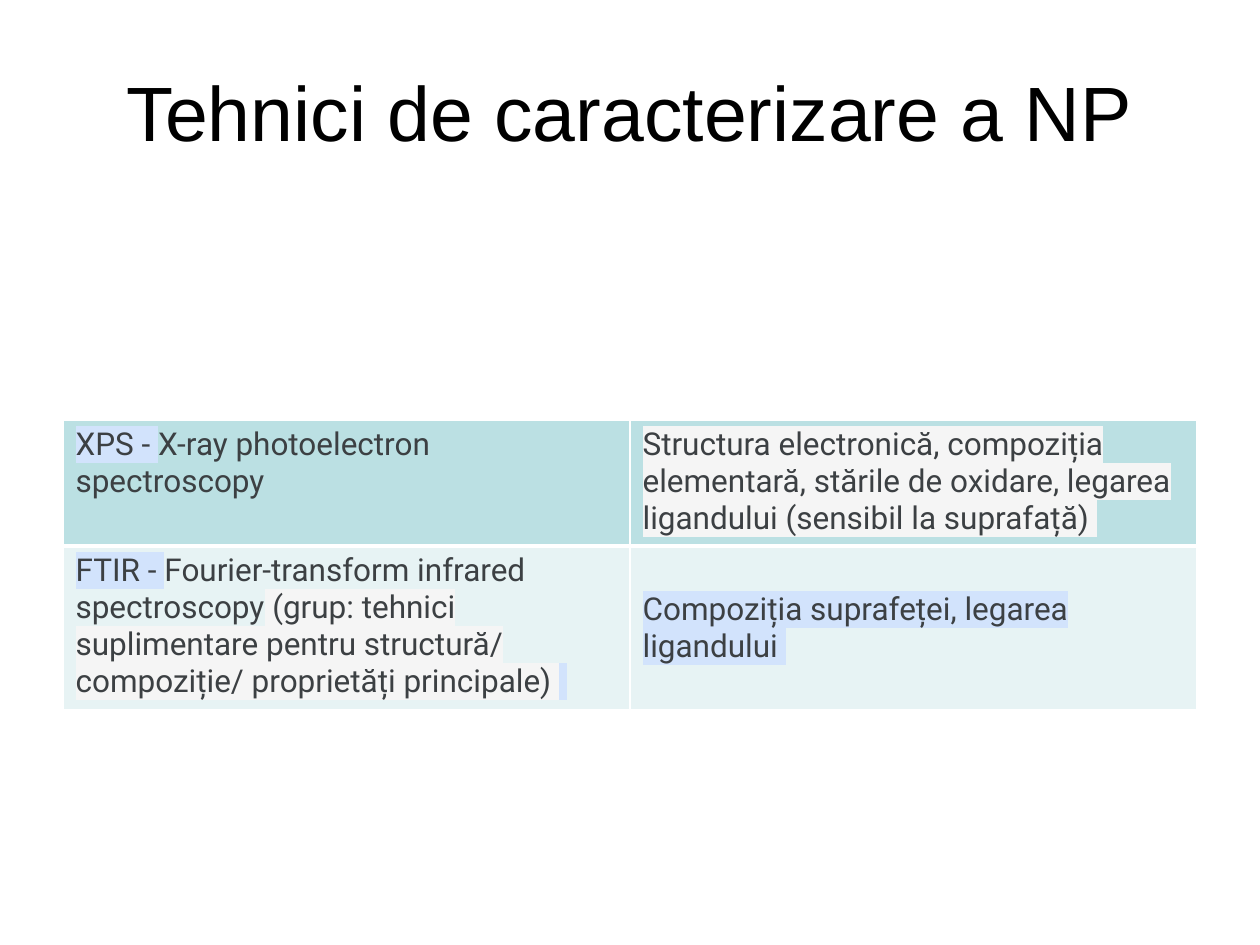
from lxml import etree
from pptx import Presentation
from pptx.dml.color import RGBColor
from pptx.enum import text
from pptx.oxml import ns
from pptx.util import Pt

BLUE, GREY = "D2E3FC", "F5F5F5"
ROWS = [
    ("BBE0E3", 70, [
        [("XPS - ", BLUE), ("X-ray photoelectron spectroscopy", None)],
        [("Structura electronică, compoziția elementară, stările de oxidare, "
          "legarea ligandului (sensibil la suprafață) ", GREY)],
    ]),
    ("E7F3F4", 90, [
        [("FTIR - ", BLUE), ("Fourier-transform infrared spectroscopy", None),
         (" (grup: tehnici suplimentare pentru structură/ compoziție/ "
          "proprietăți principale) ", GREY), (" ", BLUE)],
        [("Compoziția suprafeței, legarea ligandului ", BLUE)],
    ]),
]


def rgb(value):
    return RGBColor.from_string(value)


def add_color(parent, tag, value):
    """Append a colour-holding element, such as a:solidFill, and return it."""
    holder = etree.SubElement(parent, ns.qn(tag))
    etree.SubElement(holder, ns.qn("a:srgbClr"), val=value)
    return holder


def add_span(para, words, size, font, color, highlight=None):
    span = para.add_run()
    span.text = words
    span.font.size = Pt(size)
    span.font.name = font
    span.font.color.rgb = rgb(color)
    if highlight:
        props = span.font._element
        marker = add_color(props, "a:highlight", highlight)
        props.find(ns.qn("a:solidFill")).addnext(marker)


def add_title(page, words):
    box = page.shapes.add_textbox(Pt(36), Pt(18), Pt(648), Pt(90))
    frame = box.text_frame
    frame.word_wrap = True
    frame.vertical_anchor = text.MSO_ANCHOR.MIDDLE
    para = frame.paragraphs[0]
    para.alignment = text.PP_ALIGN.CENTER
    add_span(para, words, 44, "Arial", "000000")


def set_borders(cell, top, bottom):
    """Draw white borders; must come before the cell's fill is set."""
    props = cell._tc.get_or_add_tcPr()
    for side, width in zip("LRTB", (1, 1, top, bottom)):
        line = etree.SubElement(props, ns.qn(f"a:ln{side}"), w=str(Pt(width)))
        add_color(line, "a:solidFill", "FFFFFF")


def add_techniques_table(page):
    height = sum(row[1] for row in ROWS)
    table = page.shapes.add_table(len(ROWS), 2, Pt(36), Pt(240),
                                  Pt(648), Pt(height)).table
    for index, (fill, row_height, contents) in enumerate(ROWS):
        table.rows[index].height = Pt(row_height)
        for cell, spans in zip(table.rows[index].cells, contents):
            set_borders(cell, 3 if index else 1, 1 if index else 3)
            cell.fill.solid()
            cell.fill.fore_color.rgb = rgb(fill)
            for words, highlight in spans:
                add_span(cell.text_frame.paragraphs[0], words, 18, "Roboto",
                         "3C4043", highlight)
    table.cell(1, 1).vertical_anchor = text.MSO_ANCHOR.MIDDLE


def main():
    deck = Presentation()
    deck.slide_width, deck.slide_height = Pt(720), Pt(540)
    page = deck.slides.add_slide(deck.slide_layouts[6])
    add_title(page, "Tehnici de caracterizare a NP")
    add_techniques_table(page)
    deck.save("out.pptx")


if __name__ == "__main__":
    main()
